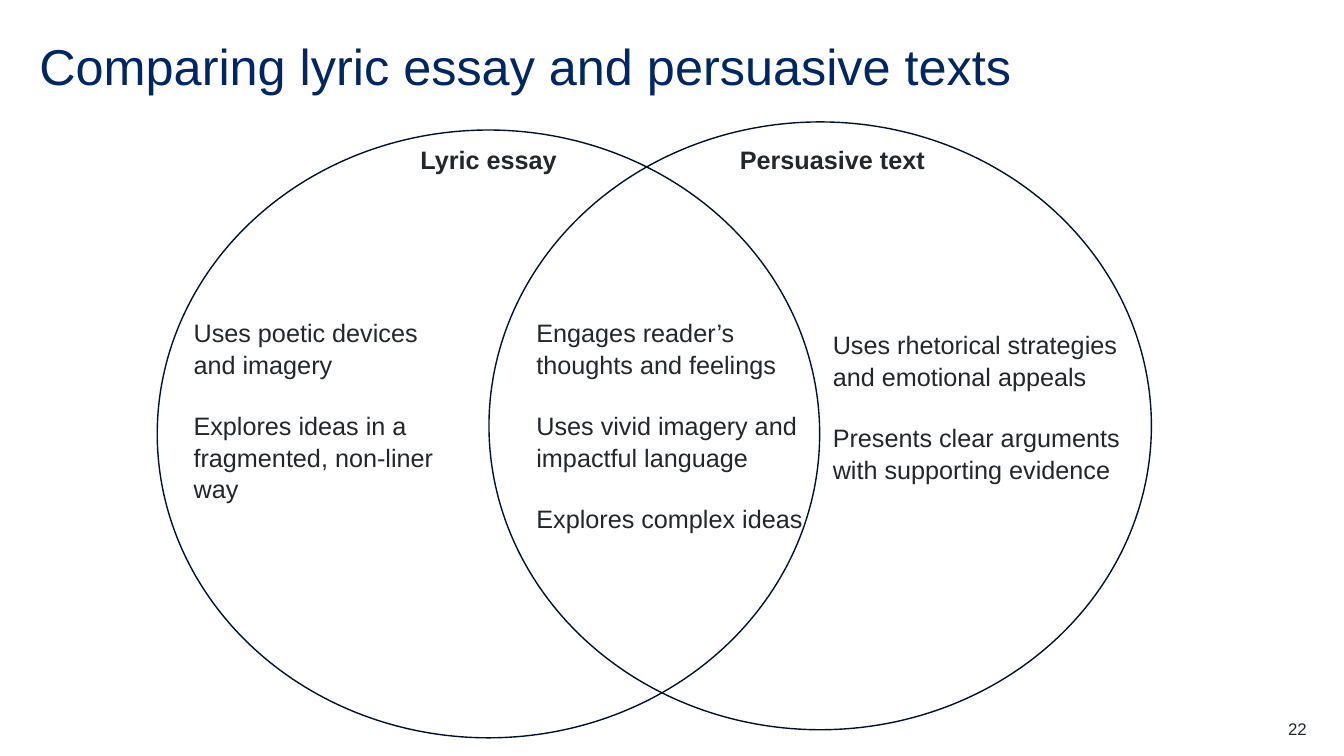
from pptx import Presentation
from pptx.dml.color import RGBColor
from pptx.enum.shapes import MSO_SHAPE
from pptx.enum.text import MSO_ANCHOR, PP_ALIGN
from pptx.util import Pt

SCALE = 9144
COLORS = {"title": "002664", "text": "22272B", "line": "00112C", "fill": "FFFFFF"}
BODY = {"line_spacing": 1.04, "space_after": Pt(21.5)}
HEAD = {"alignment": PP_ALIGN.CENTER}


def emu(*sizes):
    return [size * SCALE for size in sizes]


def color(name):
    return RGBColor.from_string(COLORS[name])


def style(target, values):
    for key, value in values.items():
        setattr(target, key, value)


def add_ring(slide, left, top, filled):
    ring = slide.shapes.add_shape(MSO_SHAPE.OVAL, *emu(left, top, 657, 603))
    ring.shadow.inherit = False
    if filled:
        ring.fill.solid()
        ring.fill.fore_color.rgb = color("fill")
    else:
        ring.fill.background()
    ring.line.color.rgb = color("line")
    ring.line.width = Pt(1)


def add_text(slide, box, lines, form, size=18, bold=False, tint="text",
             anchor=MSO_ANCHOR.TOP):
    frame = slide.shapes.add_textbox(*emu(*box)).text_frame
    style(frame, {"word_wrap": True, "vertical_anchor": anchor,
                  "margin_left": 0, "margin_right": 0,
                  "margin_top": 0, "margin_bottom": 0})
    frame.text = "\n".join(lines)
    for para in frame.paragraphs:
        style(para, form)
        for run in para.runs:
            style(run.font, {"name": "Arial", "size": Pt(size), "bold": bold})
            run.font.color.rgb = color(tint)


def main():
    deck = Presentation()
    deck.slide_width, deck.slide_height = emu(1333, 750)
    slide = deck.slides.add_slide(deck.slide_layouts[6])

    add_text(slide, (39, 39, 1256, 60),
             ["Comparing lyric essay and persuasive texts"],
             {"line_spacing": 0.9}, 36, tint="title", anchor=MSO_ANCHOR.MIDDLE)
    add_ring(slide, 156, 129, True)
    add_text(slide, (1217, 713, 79, 20), ["22"],
             {"alignment": PP_ALIGN.RIGHT}, 12)

    for left, name in ((349, "Lyric essay"), (690, "Persuasive text")):
        add_text(slide, (left, 143, 271, 83), [name], HEAD, bold=True)

    points = (
        ((532, 314, 268, 210), ["Engages reader’s thoughts and feelings",
                                "Uses vivid imagery and impactful language",
                                "Explores complex ideas"]),
        ((192, 314, 261, 210), ["Uses poetic devices and imagery",
                                "Explores ideas in a fragmented, non-liner way"]),
        ((826, 326, 303, 210), ["Uses rhetorical strategies and emotional appeals",
                                "Presents clear arguments with supporting evidence"]),
    )
    for box, lines in points:
        add_text(slide, box, lines, BODY)

    add_ring(slide, 485, 121, False)
    deck.save("out.pptx")


if __name__ == "__main__":
    main()
